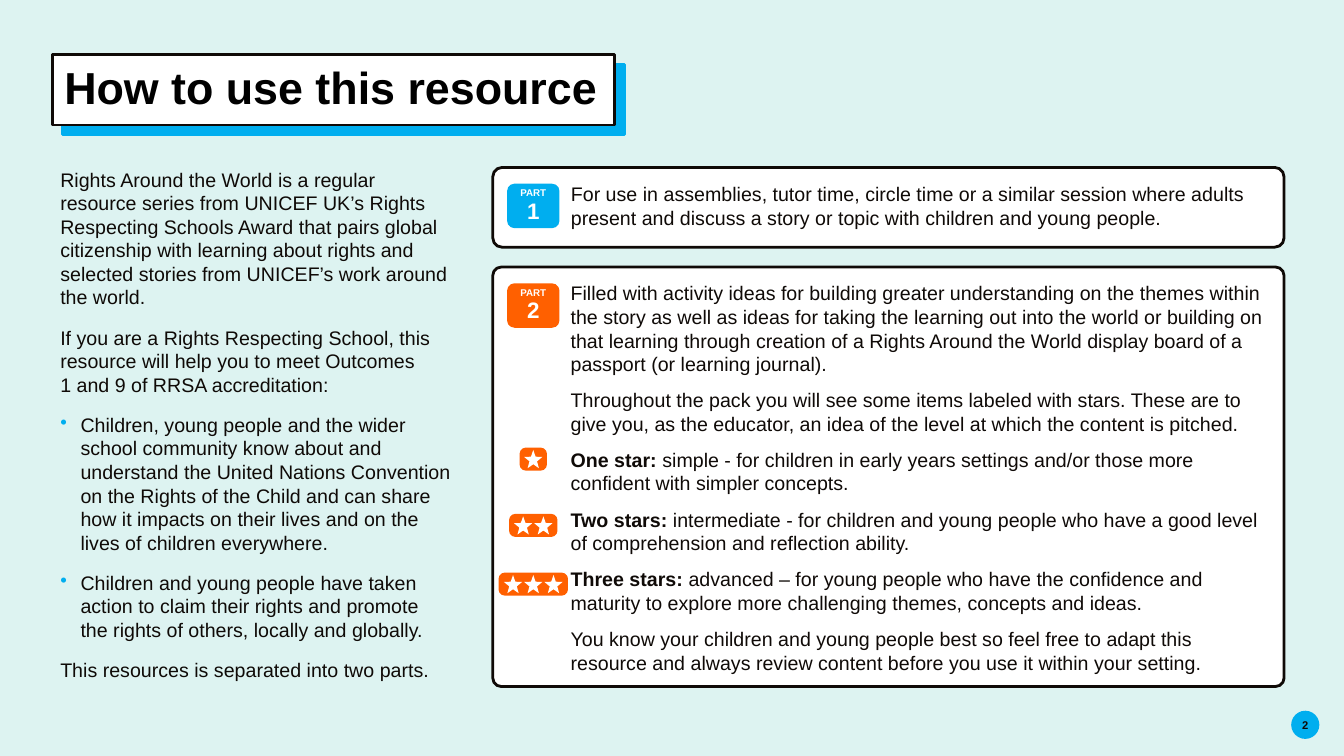
from collections import namedtuple

from lxml import etree
from pptx import Presentation
from pptx import util as u
from pptx.dml.color import RGBColor
from pptx.enum import shapes, text
from pptx.oxml import ns

COLORS = {
    "mint": "DDF3F1", "blue": "00AEEF", "orange": "FF6000",
    "ink": "0F0A07", "black": "000000", "white": "FFFFFF",
}
KINDS = shapes.MSO_SHAPE
ALIGN = text.PP_ALIGN
ANCHOR = text.MSO_ANCHOR
Box = namedtuple("Box", "left top width height")

INTRO = [
    "Rights Around the World is a regular resource series from UNICEF UK’s Rights Respecting "
    "Schools Award that pairs global citizenship with learning about rights and selected "
    "stories from UNICEF’s work around the world.",
    "If you are a Rights Respecting School, this resource will help you to meet Outcomes \n"
    "1 and 9 of RRSA accreditation:",
]
OUTCOMES = [
    "Children, young people and the wider school community know about and understand the "
    "United Nations Convention on the Rights of the Child and can share how it impacts on "
    "their lives and on the lives of children everywhere.",
    "Children and young people have taken action to claim their rights and promote \n"
    "the rights of others, locally and globally.",
]
CLOSING = "This resources is separated into two parts."
PART_ONE = [
    ("", "For use in assemblies, tutor time, circle time or a similar session where adults "
     "present and discuss a story or topic with children and young people."),
]
PART_TWO = [
    ("", "Filled with activity ideas for building greater understanding on the themes within "
     "the story as well as ideas for taking the learning out into the world or building on "
     "that learning through creation of a Rights Around the World display board of a "
     "passport (or learning journal)."),
    ("", "Throughout the pack you will see some items labeled with stars. These are to give "
     "you, as the educator, an idea of the level at which the content is pitched."),
    ("One star: ", "simple - for children in early years settings and/or those more "
     "confident with simpler concepts."),
    ("Two stars: ", "intermediate - for children and young people who have a good level of "
     "comprehension and reflection ability."),
    ("Three stars: ", "advanced – for young people who have the confidence and maturity to "
     "explore more challenging themes, concepts and ideas."),
    ("", "You know your children and young people best so feel free to adapt this resource "
     "and always review content before you use it within your setting."),
]


def rgb(name):
    """Return the named colour."""
    return RGBColor.from_string(COLORS[name])


def lengths(box):
    """Turn a box in centimetres into lengths."""
    return [u.Cm(value) for value in box]


def set_frame(frame, insets=(0, 0, 0, 0), anchor=ANCHOR.TOP):
    """Set the wrapping, insets and anchor of a text frame."""
    frame.word_wrap = True
    frame.auto_size = text.MSO_AUTO_SIZE.NONE
    frame.vertical_anchor = anchor
    (frame.margin_left, frame.margin_top,
     frame.margin_right, frame.margin_bottom) = lengths(insets)


def add_bullet(para):
    """Give a paragraph a blue bullet with a hanging indent."""
    properties = para._p.get_or_add_pPr()
    properties.set("marL", str(u.Cm(0.51)))
    properties.set("indent", str(u.Cm(-0.51)))
    color = etree.SubElement(properties, ns.qn("a:buClr"))
    etree.SubElement(color, ns.qn("a:srgbClr"), val=COLORS["blue"])
    etree.SubElement(properties, ns.qn("a:buChar"), char="•")


def add_text(frame, words, lead="", size=14, color="ink", bold=False, align=ALIGN.LEFT,
             spacing=1.0, before=0, bullet=False):
    """Add a formatted paragraph, using the empty first one if there is one."""
    first = frame.paragraphs[0]
    fresh = not first.runs
    para = first if fresh else frame.add_paragraph()
    para.alignment, para.line_spacing = align, spacing
    para.space_before = u.Pt(0 if fresh else before)
    if bullet:
        add_bullet(para)
    para.font.size, para.font.name = u.Pt(size), "Arial"
    pieces = [(lead, True)] if lead else []
    for index, (piece, strong) in enumerate(pieces + [(line, bold) for line in words.split("\n")]):
        if index > len(pieces):
            para.add_line_break()
        span = para.add_run()
        span.text = piece
        span.font.size, span.font.name, span.font.bold = u.Pt(size), "Arial", strong
        span.font.color.rgb = rgb(color)


def style_shape(shape, fill, outlined=False):
    """Set a flat fill and an optional dark outline."""
    shape.shadow.inherit = False
    shape.fill.solid()
    shape.fill.fore_color.rgb = rgb(fill)
    if outlined:
        shape.line.color.rgb = rgb("ink")
        shape.line.width = u.Pt(2)
    else:
        shape.line.fill.background()


def add_shape(parent, kind, box, fill, outlined=False, corner=None):
    """Add a filled preset shape."""
    shape = parent.shapes.add_shape(kind, *lengths(box))
    style_shape(shape, fill, outlined)
    if corner is not None:
        shape.adjustments[0] = corner
    return shape


def place_title(page, box):
    """Format the title as a rounded card with a hard blue shadow."""
    title = page.shapes.title
    title.left, title.top, title.width, title.height = lengths(box)
    properties = title._element.spPr
    outline = etree.SubElement(properties, ns.qn("a:prstGeom"), prst="roundRect")
    guides = etree.SubElement(outline, ns.qn("a:avLst"))
    etree.SubElement(guides, ns.qn("a:gd"), name="adj", fmla="val 2500")
    style_shape(title, "white", outlined=True)
    effects = properties.find(ns.qn("a:effectLst"))
    shadow = etree.SubElement(effects, ns.qn("a:outerShdw"), blurRad="0", dist=str(u.Pt(10)),
                              dir="2700000", algn="tl", rotWithShape="0")
    etree.SubElement(shadow, ns.qn("a:srgbClr"), val=COLORS["blue"])
    set_frame(title.text_frame, (0.3, 0.2, 0.2, 0.2), ANCHOR.MIDDLE)
    add_text(title.text_frame, "How to use this resource", size=32, color="black",
             bold=True, spacing=0.9)


def place_intro(page, box):
    """Place the introduction column."""
    frame = page.shapes.add_textbox(*lengths(box)).text_frame
    set_frame(frame)
    for words in INTRO + OUTCOMES + [CLOSING]:
        add_text(frame, words, before=12, bullet=words in OUTCOMES)


def place_part(page, box, number, color, items, corner):
    """Place a panel with its part badge and paragraphs."""
    panel = add_shape(page, KINDS.ROUNDED_RECTANGLE, box, "white", True, corner)
    set_frame(panel.text_frame, (1.9, 0.3, 0.3, 0.3))
    for lead, words in items:
        add_text(panel.text_frame, words, lead=lead, before=9)
    badge_box = Box(box.left + 0.36, box.top + 0.41, 1.32, 1.12)
    badge = add_shape(page, KINDS.ROUNDED_RECTANGLE, badge_box, color)
    set_frame(badge.text_frame, anchor=ANCHOR.MIDDLE)
    for words, size in (("PART", 7), (number, 16)):
        add_text(badge.text_frame, words, size=size, color="white", bold=True,
                 align=ALIGN.CENTER, spacing=0.95)


def place_stars(page, box, count):
    """Centre a pill of stars in the box."""
    group = page.shapes.add_group_shape()
    pitch, star = 0.51, 0.46
    center = box.left + box.width / 2
    width = 0.69 + 0.53 * (count - 1)
    pill = Box(center - width / 2, box.top, width, box.height)
    add_shape(group, KINDS.ROUNDED_RECTANGLE, pill, "orange", corner=0.27)
    start = center - (star + pitch * (count - 1)) / 2
    for index in range(count):
        star_box = Box(start + pitch * index, box.top + 0.06, star, star)
        add_shape(group, KINDS.STAR_5_POINT, star_box, "white", corner=0.207)


def place_number(page, box):
    """Place the page number disc."""
    disc = add_shape(page, KINDS.OVAL, box, "blue")
    set_frame(disc.text_frame, anchor=ANCHOR.MIDDLE)
    add_text(disc.text_frame, "2", size=8, bold=True, align=ALIGN.CENTER)


def main():
    """Build and save the deck."""
    deck = Presentation()
    deck.slide_width, deck.slide_height = u.Cm(33.87), u.Cm(19.05)
    page = deck.slides.add_slide(deck.slide_layouts[5])
    page.background.fill.solid()
    page.background.fill.fore_color.rgb = rgb("mint")
    place_title(page, Box(1.32, 1.37, 14.17, 1.78))
    place_intro(page, Box(1.52, 4.22, 9.86, 13.08))
    place_part(page, Box(12.42, 4.22, 19.94, 2.01), "1", "blue", PART_ONE, 0.116)
    second = Box(12.42, 6.73, 19.94, 10.57)
    place_part(page, second, "2", "orange", PART_TWO, 0.02)
    for count, drop in enumerate((4.55, 6.22, 7.7), start=1):
        place_stars(page, Box(second.left + 0.1, second.top + drop, 1.84, 0.58), count)
    place_number(page, Box(32.54, 17.91, 0.71, 0.71))
    deck.save("out.pptx")


if __name__ == "__main__":
    main()
